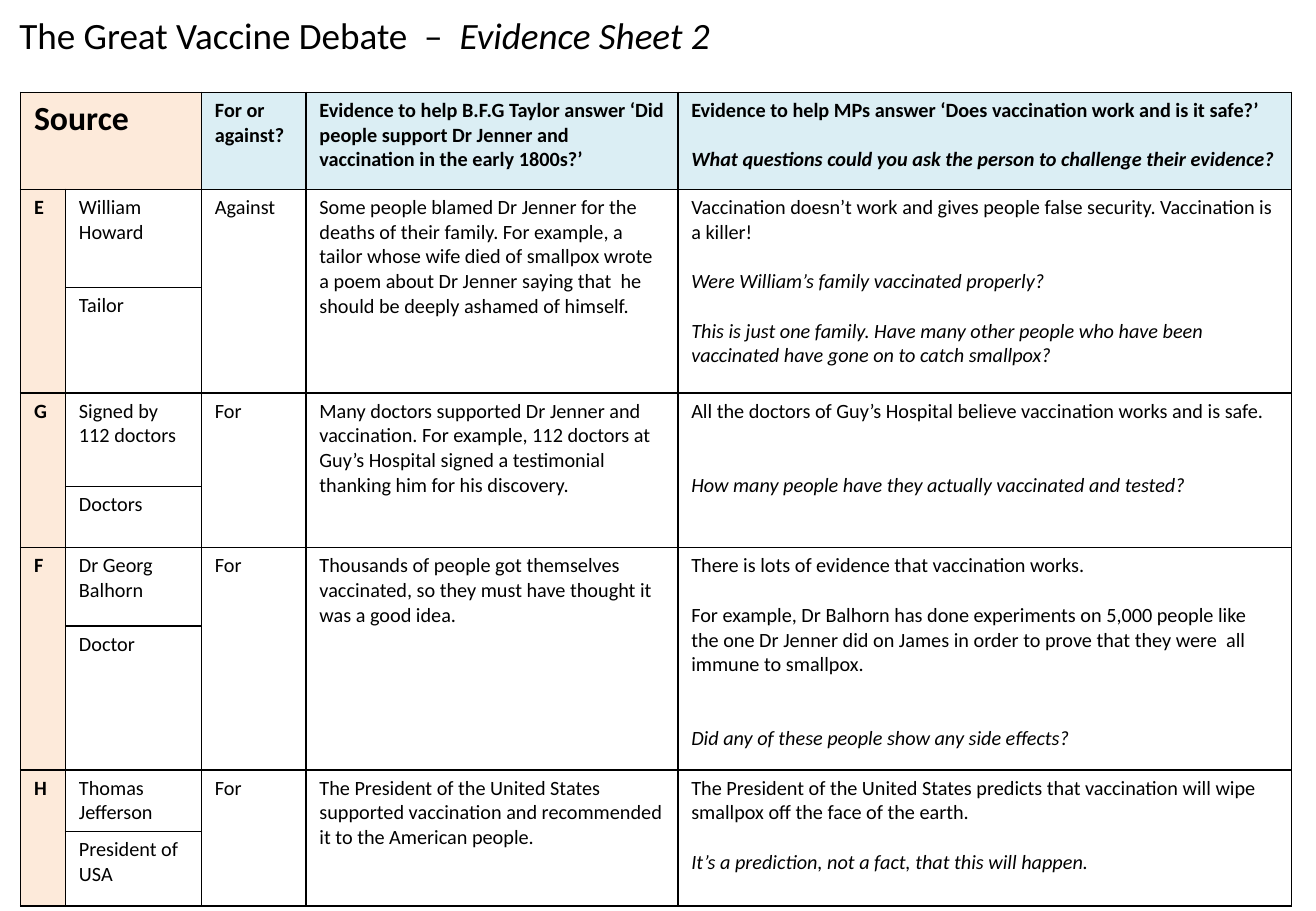
from lxml import etree
from pptx import Presentation
from pptx.dml.color import RGBColor
from pptx.enum.text import MSO_ANCHOR, MSO_AUTO_SIZE, PP_ALIGN
from pptx.oxml.ns import qn
from pptx.util import Inches, Pt

LEFT = PP_ALIGN.LEFT
TOP = MSO_ANCHOR.TOP
NO_FIT = MSO_AUTO_SIZE.NONE
BLACK = RGBColor(0x00, 0x00, 0x00)
WHITE = RGBColor(0xFF, 0xFF, 0xFF)
PEACH = RGBColor(0xFD, 0xEA, 0xDA)
PALE_BLUE = RGBColor(0xDB, 0xEE, 0xF4)
FONT = "Calibri"
LINE_PITCH = 14.65
TITLE_ONLY = 5

COLUMN_WIDTHS = [0.37, 1.12, 0.86, 3.06, 5.05]
ROW_HEIGHTS = [0.79, 0.8, 0.86, 0.76, 0.5, 0.64, 1.17, 0.42, 0.61]

HEADINGS = [
    "For or against?",
    "Evidence to help B.F.G Taylor answer ‘Did people support Dr Jenner and vaccination in the early 1800s?’",
    [
        (0, "Evidence to help MPs answer ‘Does vaccination work and is it safe?’", False),
        (1, "What questions could you ask the person to challenge their evidence?", True),
    ],
]

SOURCES = [
    (
        "E", "William Howard", "Tailor", "Against",
        "Some people blamed Dr Jenner for the deaths of their family. For example, a tailor whose wife died "
        "of smallpox wrote a poem about Dr Jenner saying that  he should be deeply ashamed of himself.",
        [
            (0, "Vaccination doesn’t work and gives people false security. Vaccination is a killer!", False),
            (1, "Were William’s family vaccinated properly?", True),
            (1, "This is just one family. Have many other people who have been vaccinated have gone on "
                "to catch smallpox?", True),
        ],
    ),
    (
        "G", "Signed by 112 doctors", "Doctors", "For",
        "Many doctors supported Dr Jenner and vaccination. For example, 112 doctors at Guy’s Hospital "
        "signed a testimonial thanking him for his discovery.",
        [
            (0, "All the doctors of Guy’s Hospital believe vaccination works and is safe.", False),
            (2, "How many people have they actually vaccinated and tested?", True),
        ],
    ),
    (
        "F", "Dr Georg Balhorn", "Doctor", "For",
        "Thousands of people got themselves vaccinated, so they must have thought it was a good idea.",
        [
            (0, "There is lots of evidence that vaccination works.", False),
            (1, "For example, Dr Balhorn has done experiments on 5,000 people like the one Dr Jenner did "
                "on James in order to prove that they were  all immune to smallpox.", False),
            (2, "Did any of these people show any side effects?", True),
        ],
    ),
    (
        "H", "Thomas Jefferson", "President of USA", "For",
        "The President of the United States supported vaccination and recommended it to the American people.",
        [
            (0, "The President of the United States predicts that vaccination will wipe smallpox off the "
                "face of the earth.", False),
            (1, "It’s a prediction, not a fact, that this will happen.", True),
        ],
    ),
]


def set_font(font, size, bold=False):
    font.name = FONT
    font.size = Pt(size)
    font.bold = bold
    font.color.rgb = BLACK


def add_title(page, left, top, width, height):
    title = page.shapes.title
    title.left, title.top = Inches(left), Inches(top)
    title.width, title.height = Inches(width), Inches(height)
    frame = title.text_frame
    frame.auto_size = NO_FIT
    frame.vertical_anchor = TOP
    para = frame.paragraphs[0]
    para.alignment = LEFT
    set_font(para.font, 22)
    para.add_run().text = "The Great Vaccine Debate  –  "
    subtitle = para.add_run()
    subtitle.text = "Evidence Sheet 2"
    subtitle.font.italic = True


def style_cell(cell, color):
    properties = cell._tc.get_or_add_tcPr()
    for side in ("a:lnL", "a:lnR", "a:lnT", "a:lnB"):
        line = etree.SubElement(properties, qn(side), w=str(Pt(1)))
        fill = etree.SubElement(line, qn("a:solidFill"))
        etree.SubElement(fill, qn("a:srgbClr"), val=str(BLACK))
    cell.fill.solid()
    cell.fill.fore_color.rgb = color
    cell.margin_left = cell.margin_right = Inches(0.11)
    cell.margin_top = cell.margin_bottom = Inches(0.05)
    cell.vertical_anchor = TOP


def write_cell(cell, content, size=12, bold=False):
    entries = [(0, content, False)] if isinstance(content, str) else content
    frame = cell.text_frame
    for index, (gap_lines, text, italic) in enumerate(entries):
        para = frame.add_paragraph() if index else frame.paragraphs[0]
        para.text = text
        para.alignment = LEFT
        para.space_before = Pt(gap_lines * LINE_PITCH)
        set_font(para.font, size, bold)
        para.font.italic = italic


def cell_color(row, column):
    if column == 0 or (row == 0 and column == 1):
        return PEACH
    return PALE_BLUE if row == 0 else WHITE


def add_evidence_table(page, left, top, width, height):
    frame = page.shapes.add_table(
        len(ROW_HEIGHTS), len(COLUMN_WIDTHS),
        Inches(left), Inches(top), Inches(width), Inches(height),
    )
    table = frame.table
    table.first_row = False
    table.horz_banding = False
    for column, share in zip(table.columns, COLUMN_WIDTHS):
        column.width = Inches(width * share / sum(COLUMN_WIDTHS))
    for row, share in zip(table.rows, ROW_HEIGHTS):
        row.height = Inches(height * share / sum(ROW_HEIGHTS))
    for row in range(len(ROW_HEIGHTS)):
        for column in range(len(COLUMN_WIDTHS)):
            style_cell(table.cell(row, column), cell_color(row, column))

    table.cell(0, 0).merge(table.cell(0, 1))
    write_cell(table.cell(0, 0), "Source", size=20, bold=True)
    for column, heading in enumerate(HEADINGS, start=2):
        write_cell(table.cell(0, column), heading, bold=True)

    for index, (letter, name, role, stance, support, evidence) in enumerate(SOURCES):
        row = 1 + 2 * index
        for column in (0, 2, 3, 4):
            table.cell(row, column).merge(table.cell(row + 1, column))
        write_cell(table.cell(row, 0), letter, bold=True)
        for column, content in enumerate((name, stance, support, evidence), start=1):
            write_cell(table.cell(row, column), content)
        write_cell(table.cell(row + 1, 1), role)


def main():
    deck = Presentation()
    deck.slide_width, deck.slide_height = Inches(10.83), Inches(7.5)
    page = deck.slides.add_slide(deck.slide_layouts[TITLE_ONLY])
    add_title(page, 0.06, 0.05, 6.28, 0.47)
    add_evidence_table(page, 0.17, 0.76, 10.46, 6.62)
    deck.save("out.pptx")


if __name__ == "__main__":
    main()
